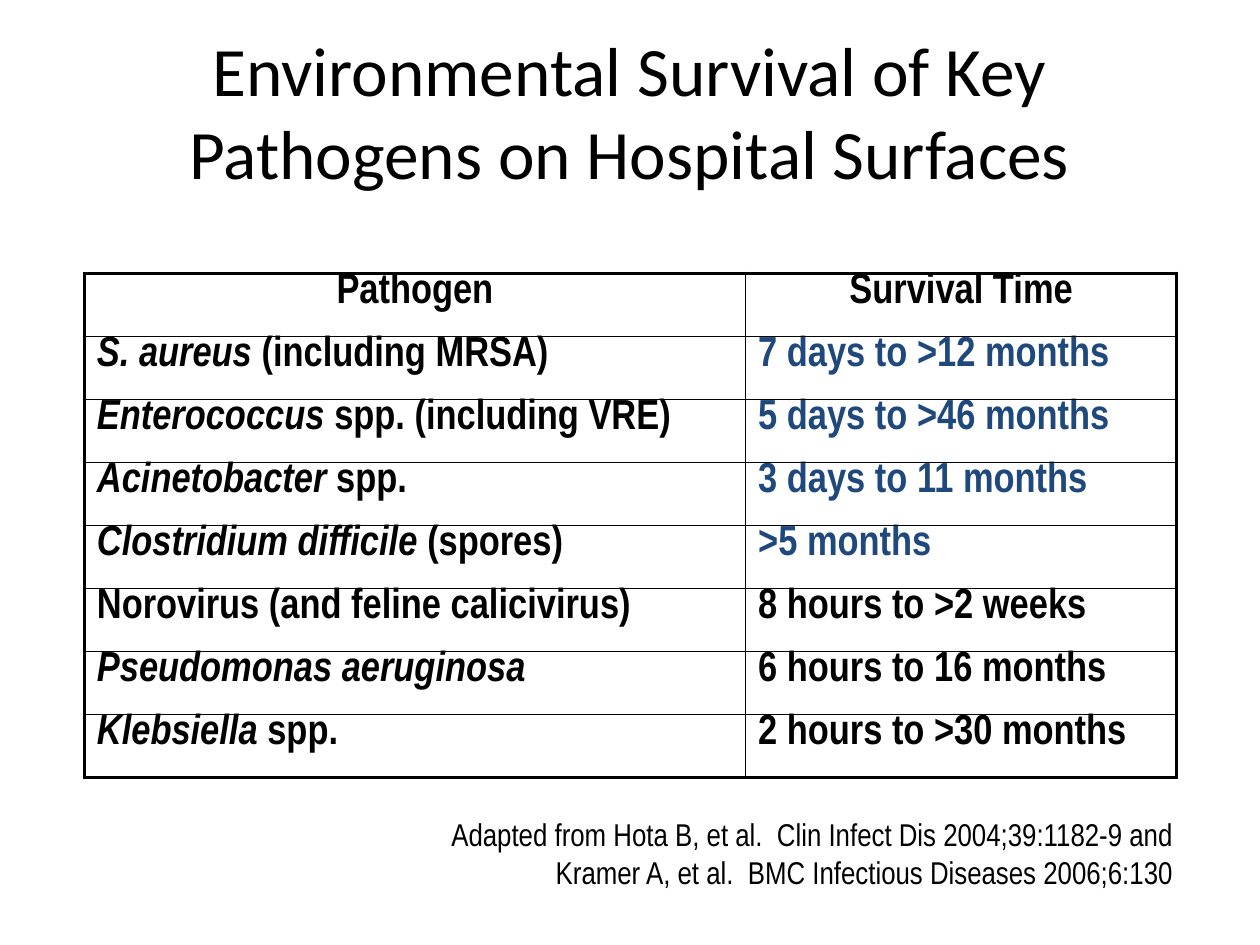
from lxml.etree import SubElement
from pptx import Presentation
from pptx.dml.color import RGBColor
from pptx.enum.text import MSO_ANCHOR as Anchor, PP_ALIGN as Align
from pptx.oxml.ns import qn
from pptx.util import Cm, Pt

BLACK = RGBColor(0, 0, 0)
NAVY = RGBColor(0x1F, 0x49, 0x7D)
NARROW = "Arial Narrow"
THIN, THICK = Pt(1), Pt(2.25)

TITLE = "Environmental Survival of Key Pathogens on Hospital Surfaces"
HEADINGS = ("Pathogen", "Survival Time")
SURVIVAL = [
    ("S. aureus", " (including MRSA)", "7 days to >12 months", NAVY),
    ("Enterococcus", " spp. (including VRE)", "5 days to >46 months", NAVY),
    ("Acinetobacter", " spp.", "3 days to 11 months", NAVY),
    ("Clostridium difficile", " (spores)", ">5 months", NAVY),
    ("", "Norovirus (and feline calicivirus)", "8 hours to >2 weeks", BLACK),
    ("Pseudomonas aeruginosa", "", "6 hours to 16 months", BLACK),
    ("Klebsiella", " spp.", "2 hours to >30 months", BLACK),
]
CITATIONS = [
    "Adapted from Hota B, et al.  Clin Infect Dis 2004;39:1182-9 and",
    "Kramer A, et al.  BMC Infectious Diseases 2006;6:130",
]


def style_paragraph(paragraph, font_name, size, color=BLACK, align=Align.LEFT, bold=False):
    """Set alignment and font for a whole paragraph."""
    paragraph.alignment = align
    font = paragraph.font
    font.name, font.size, font.bold = font_name, Pt(size), bold
    font.color.rgb = color


def add_lines(slide, lines, box, font_name, size, align, anchor=Anchor.TOP):
    """Add a wrapping text box with one paragraph per line."""
    frame = slide.shapes.add_textbox(*box).text_frame
    frame.word_wrap = True
    frame.vertical_anchor = anchor
    frame.text = "\n".join(lines)
    for paragraph in frame.paragraphs:
        style_paragraph(paragraph, font_name, size, align=align)


def set_borders(cell, left, right, top, bottom):
    """Draw the four black borders of a cell at the given widths."""
    properties = cell._tc.get_or_add_tcPr()
    sides = zip(("a:lnL", "a:lnR", "a:lnT", "a:lnB"), (left, right, top, bottom))
    for position, (tag, width) in enumerate(sides):
        border = SubElement(properties, qn(tag), w=str(int(width)))
        fill = SubElement(border, qn("a:solidFill"))
        SubElement(fill, qn("a:srgbClr"), val=str(BLACK))
        properties.insert(position, border)


def fill_cell(cell, italic_part, plain_part, color=BLACK, align=Align.LEFT):
    """Write a bold entry whose species name is italic."""
    cell.fill.background()
    cell.margin_top = cell.margin_bottom = Cm(0)
    paragraph = cell.text_frame.paragraphs[0]
    for part, italic in ((italic_part, True), (plain_part, False)):
        if part:
            run = paragraph.add_run()
            run.text = part
            run.font.italic = italic
    style_paragraph(paragraph, NARROW, 24, color, align, bold=True)


def add_survival_table(slide):
    """Add the table of pathogens and survival times."""
    row_count = len(SURVIVAL) + 1
    table = slide.shapes.add_table(
        row_count, 2, Cm(1.7), Cm(5.51), Cm(22.02), Cm(1.27 * row_count)
    ).table
    table.first_row = table.horz_banding = False
    table.columns[0].width, table.columns[1].width = Cm(13.33), Cm(8.69)
    for column, heading in enumerate(HEADINGS):
        fill_cell(table.cell(0, column), "", heading, align=Align.CENTER)
    for row, (species, detail, duration, color) in enumerate(SURVIVAL, 1):
        fill_cell(table.cell(row, 0), species, detail)
        fill_cell(table.cell(row, 1), "", duration, color)
    for row in range(row_count):
        top = THICK if row == 0 else THIN
        bottom = THICK if row == row_count - 1 else THIN
        set_borders(table.cell(row, 0), THICK, THIN, top, bottom)
        set_borders(table.cell(row, 1), THIN, THICK, top, bottom)


def main():
    """Build and save the slide."""
    deck = Presentation()
    deck.slide_width, deck.slide_height = Cm(25.4), Cm(19.05)
    slide = deck.slides.add_slide(deck.slide_layouts[6])
    title_box = (Cm(2.06), Cm(0.64), Cm(21.26), Cm(3.18))
    citation_box = (Cm(3.76), Cm(16.31), Cm(20.14), Cm(1.8))
    add_lines(slide, [TITLE], title_box, "Calibri", 39.6, Align.CENTER, Anchor.MIDDLE)
    add_survival_table(slide)
    add_lines(slide, CITATIONS, citation_box, NARROW, 18, Align.RIGHT)
    deck.save("out.pptx")


if __name__ == "__main__":
    main()
